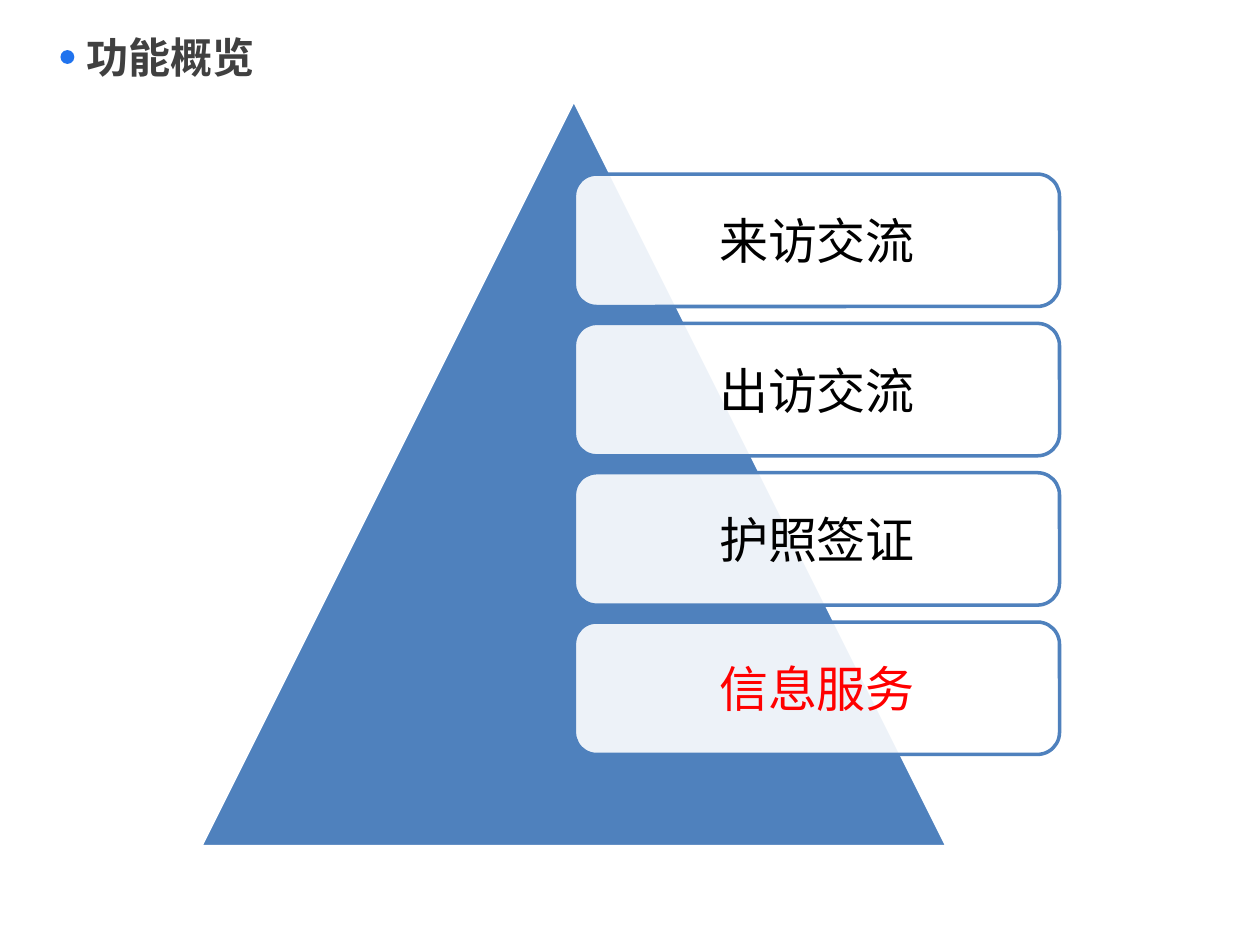
from lxml.etree import SubElement
from pptx import Presentation
from pptx.dml.color import RGBColor
from pptx.enum.shapes import MSO_SHAPE
from pptx.enum.text import MSO_ANCHOR, PP_ALIGN
from pptx.oxml.ns import qn
from pptx.util import Cm, Pt

COLORS = {
    "bullet": "2073EE",
    "title": "404040",
    "blue": "4F81BD",
    "white": "FFFFFF",
    "black": "000000",
    "red": "FF0000",
}
CJK_FONT = "Noto Sans CJK SC"
LATIN_FONT = "Calibri"


class SlideBuilder:
    def __init__(self, slide):
        self.slide = slide

    def color(self, name):
        return RGBColor.from_string(COLORS[name])

    def shape(self, kind, x, y, w, h, fill, line=None, opacity=100):
        sp = self.slide.shapes.add_shape(kind, Cm(x), Cm(y), Cm(w), Cm(h))
        sp.shadow.inherit = False
        sp.fill.solid()
        sp.fill.fore_color.rgb = self.color(fill)
        if opacity < 100:
            clr = sp.fill._xPr.find(qn("a:solidFill"))[0]
            SubElement(clr, qn("a:alpha"), val=str(opacity * 1000))
        if line:
            sp.line.color.rgb = self.color(line)
            sp.line.width = Pt(2)
        else:
            sp.line.fill.background()
        return sp

    def label(self, sp, text, size, color, font, align, bold=False, inset=0.25):
        tf = sp.text_frame
        tf.word_wrap = True
        tf.vertical_anchor = MSO_ANCHOR.MIDDLE
        tf.margin_left = tf.margin_right = Cm(inset)
        tf.margin_top = tf.margin_bottom = Cm(inset)
        tf.text = text
        p = tf.paragraphs[0]
        p.alignment = align
        r = p.runs[0]
        r.font.size = Pt(size)
        r.font.bold = bold
        r.font.name = font
        r.font.color.rgb = self.color(color)
        SubElement(r.font._element, qn("a:ea"), typeface=CJK_FONT)

    def title(self, text):
        self.shape(MSO_SHAPE.OVAL, 1.22, 1.01, 0.28, 0.28, "bullet")
        sp = self.slide.shapes.add_textbox(Cm(1.5), Cm(0.3), Cm(22.58), Cm(1.7))
        self.label(sp, text, 24, "title", CJK_FONT, PP_ALIGN.LEFT, bold=True)

    def card(self, x, y, w, h, text, color):
        sp = self.shape(MSO_SHAPE.ROUNDED_RECTANGLE, x, y, w, h,
                        "white", "blue", opacity=90)
        self.label(sp, text, 28, color, LATIN_FONT, PP_ALIGN.CENTER, inset=0.3)


def main():
    prs = Presentation()
    prs.slide_width, prs.slide_height = Cm(25.4), Cm(19.05)
    s = SlideBuilder(prs.slides.add_slide(prs.slide_layouts[6]))

    # Title with its dot
    s.title("功能概览")

    # Pyramid behind the cards
    s.shape(MSO_SHAPE.ISOSCELES_TRIANGLE, 4.04, 2.01, 15.06, 15.06,
            "blue", "white")

    # Evenly stacked function cards
    cards = [("来访交流", "black"), ("出访交流", "black"),
             ("护照签证", "black"), ("信息服务", "red")]
    top, height, gap = 3.51, 2.67, 0.34
    for i, (text, color) in enumerate(cards):
        s.card(11.58, top + i * (height + gap), 9.78, height, text, color)

    prs.save("out.pptx")


if __name__ == "__main__":
    main()
